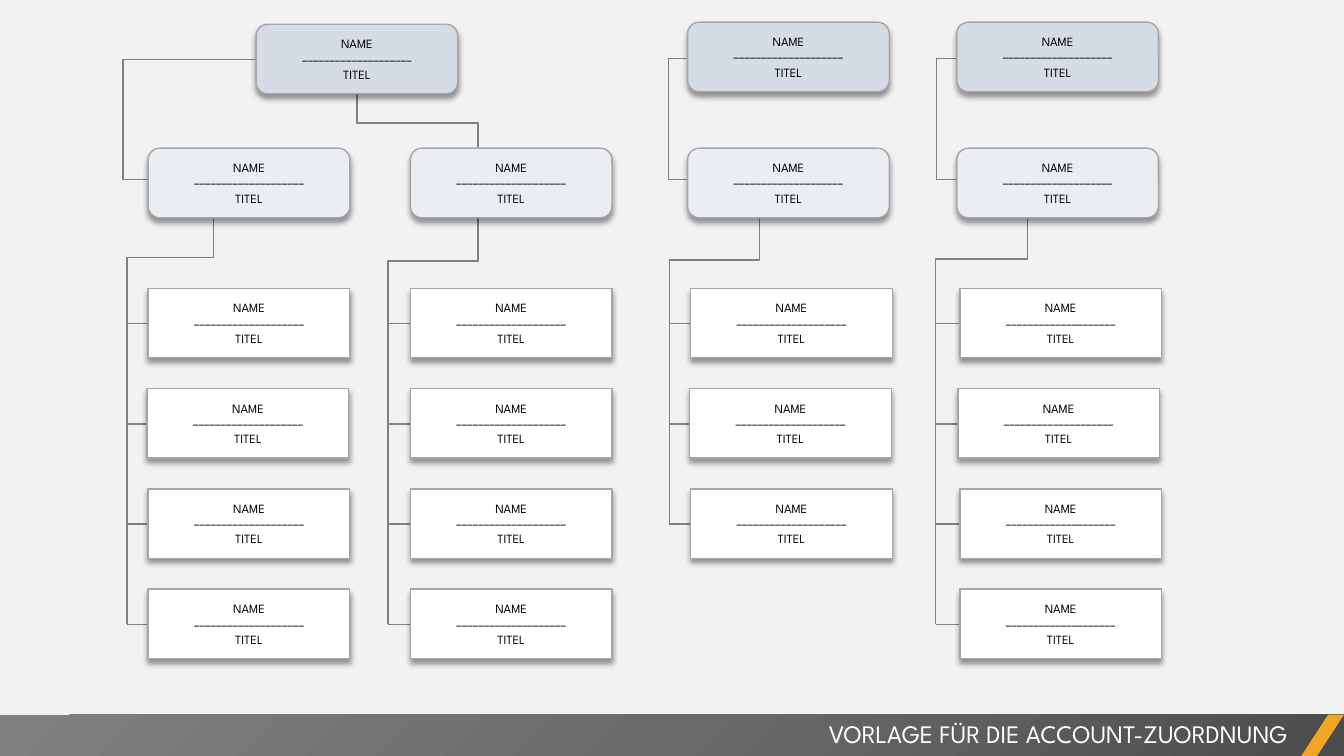
"""Build the account mapping template slide: four reporting lines of name cards."""
from dataclasses import dataclass

from lxml import etree
from pptx import Presentation
from pptx.dml.color import RGBColor
from pptx.enum.shapes import MSO_CONNECTOR, MSO_SHAPE
from pptx.enum.text import MSO_ANCHOR, MSO_AUTO_SIZE, PP_ALIGN
from pptx.oxml import parse_xml
from pptx.oxml.ns import nsdecls, qn
from pptx.shapes.autoshape import Shape
from pptx.shapes.connector import Connector
from pptx.slide import Slide
from pptx.util import Inches, Pt

RECTANGLE = MSO_SHAPE.RECTANGLE
ROUNDED = MSO_SHAPE.FLOWCHART_ALTERNATE_PROCESS
PARALLELOGRAM = MSO_SHAPE.PARALLELOGRAM
STRAIGHT = MSO_CONNECTOR.STRAIGHT
ELBOW = MSO_CONNECTOR.ELBOW
CENTER = PP_ALIGN.CENTER
RIGHT = PP_ALIGN.RIGHT
MIDDLE = MSO_ANCHOR.MIDDLE
FIT_SHAPE = MSO_AUTO_SIZE.SHAPE_TO_FIT_TEXT

BACKGROUND = RGBColor(0xF2, 0xF2, 0xF2)
WHITE = RGBColor(0xFF, 0xFF, 0xFF)
BLACK = RGBColor(0x00, 0x00, 0x00)
HEAD_BLUE = RGBColor(0xD6, 0xDC, 0xE5)
LEAD_BLUE = RGBColor(0xEA, 0xEE, 0xF3)
BORDER_GRAY = RGBColor(0xA6, 0xA6, 0xA6)
LINE_GRAY = RGBColor(0x80, 0x80, 0x80)
ORANGE = RGBColor(0xF0, 0xA6, 0x22)
BAR_STOPS = ((0, RGBColor(0x4C, 0x4C, 0x4C)), (50, RGBColor(0x6B, 0x6B, 0x6B)), (100, LINE_GRAY))

FONT = "League Spartan"
CARD_LINES = ("NAME", "–" * 20, "TITEL")
CARD_WIDTH, CARD_HEIGHT = 2, 0.69
LEAD_TOP, LEAD_BOTTOM = 1.47, 1.85
MEMBER_TOP, BRANCH_TOP, ROW_STEP = 2.86, 3.21, 0.995
BRANCH_LENGTH = 0.66


@dataclass(frozen=True)
class Team:
    """A lead card and the members hanging from its trunk line."""
    lead_left: float
    member_left: float
    second_left: float
    trunk: float
    stem: float
    turn: float
    members: int


@dataclass(frozen=True)
class Head:
    """A top card and the line that leads from it to the lead below."""
    left: float
    top: float
    start: tuple[float, float]
    turn: float
    end: tuple[float, float]


TEAMS = (
    Team(1.47, 1.47, 1.46, 1.26, 2.12, 2.56, 4),
    Team(4.07, 4.07, 4.07, 3.85, 4.74, 2.59, 4),
    Team(6.82, 6.85, 6.84, 6.64, 7.53, 2.58, 3),
    Team(9.49, 9.52, 9.50, 9.28, 10.19, 2.57, 4),
)
HEADS = (
    Head(2.54, 0.24, (2.74, 0.59), 1.22, (1.49, 1.78)),
    Head(6.82, 0.22, (7.86, 0.58), 6.63, (6.86, 1.78)),
    Head(9.49, 0.22, (10.53, 0.58), 9.29, (9.53, 1.78)),
)


def add_line(slide: Slide, kind: MSO_CONNECTOR, start: tuple[float, float],
             end: tuple[float, float]) -> Connector:
    """Draw a thin gray connector without a shadow."""
    line = slide.shapes.add_connector(kind, *map(Inches, start + end))
    line.line.color.rgb = LINE_GRAY
    line.line.width = Pt(1)
    etree.SubElement(line.element.spPr, qn("a:effectLst"))
    return line


def set_bend(line: Connector, share: float) -> None:
    """Place the middle segment of an elbow at a share of its length."""
    geometry = line.element.spPr.find(qn("a:prstGeom"))
    guides = geometry.find(qn("a:avLst"))
    if guides is None:
        guides = etree.SubElement(geometry, qn("a:avLst"))
    etree.SubElement(guides, qn("a:gd"), name="adj1", fmla=f"val {round(share * 100000)}")


def add_side_elbow(slide: Slide, start: tuple[float, float], turn: float,
                   end: tuple[float, float]) -> None:
    """Draw an elbow that leaves sideways and runs down at x = turn."""
    line = add_line(slide, ELBOW, start, end)
    set_bend(line, (turn - start[0]) / (end[0] - start[0]))


def add_down_elbow(slide: Slide, start: tuple[float, float], turn: float,
                   end: tuple[float, float]) -> None:
    """Draw an elbow that leaves downwards and runs across at y = turn."""
    (x1, y1), (x2, y2) = start, end
    center_x, center_y = (x1 + x2) / 2, (y1 + y2) / 2
    half_drop, half_shift = (y2 - y1) / 2, (x2 - x1) / 2
    line = add_line(slide, ELBOW, (center_x - half_drop, center_y + half_shift),
                    (center_x + half_drop, center_y - half_shift))
    line.rotation = 90
    set_bend(line, (turn - y1) / (y2 - y1))


def add_plain_shape(slide: Slide, kind: MSO_SHAPE, left: float, top: float,
                    width: float, height: float, fill: RGBColor) -> Shape:
    """Draw a filled shape without outline or shadow."""
    shape = slide.shapes.add_shape(kind, *map(Inches, (left, top, width, height)))
    shape.fill.solid()
    shape.fill.fore_color.rgb = fill
    shape.line.fill.background()
    shape.shadow.inherit = False
    return shape


def add_card(slide: Slide, kind: MSO_SHAPE, left: float, top: float, fill: RGBColor) -> None:
    """Draw a name card with a soft shadow below it."""
    card = add_plain_shape(slide, kind, left, top, CARD_WIDTH, CARD_HEIGHT, fill)
    card.line.color.rgb = BORDER_GRAY
    card.line.width = Pt(1)
    card.element.spPr.find(qn("a:effectLst")).append(parse_xml(
        f'<a:outerShdw {nsdecls("a")} blurRad="{Pt(4)}" dist="{Pt(3)}" dir="5400000" '
        'algn="t" rotWithShape="0"><a:srgbClr val="000000"><a:alpha val="40000"/>'
        '</a:srgbClr></a:outerShdw>'))
    frame = card.text_frame
    frame.margin_left = frame.margin_right = Inches(0.02)
    frame.margin_top = frame.margin_bottom = Inches(0.02)
    frame.vertical_anchor = MIDDLE
    frame.text = "\n".join(CARD_LINES)
    for paragraph in frame.paragraphs:
        paragraph.alignment = CENTER
        paragraph.font.name = FONT
        paragraph.font.size = Pt(9)
        paragraph.font.color.rgb = BLACK


def add_footer(slide: Slide) -> None:
    """Draw the gradient bar, its orange accent and the slide title."""
    bar = add_plain_shape(slide, RECTANGLE, 0, 7.09, 13.33, 0.42, LINE_GRAY)
    stops = "".join(f'<a:gs pos="{position * 1000}"><a:srgbClr val="{color}"/></a:gs>'
                    for position, color in BAR_STOPS)
    properties = bar.element.spPr
    properties.replace(properties.find(qn("a:solidFill")), parse_xml(
        f'<a:gradFill {nsdecls("a")} rotWithShape="1"><a:gsLst>{stops}</a:gsLst>'
        '<a:path path="circle"><a:fillToRect l="100000" t="100000"/></a:path></a:gradFill>'))
    accent = add_plain_shape(slide, PARALLELOGRAM, 12.9, 7.09, 0.43, 0.42, ORANGE)
    accent.adjustments[0] = 0.65
    title = slide.shapes.add_textbox(*map(Inches, (5.25, 7.08, 7.62, 0.4))).text_frame
    title.word_wrap = True
    title.auto_size = FIT_SHAPE
    title.text = "VORLAGE FÜR DIE ACCOUNT-ZUORDNUNG"
    heading = title.paragraphs[0]
    heading.alignment = RIGHT
    heading.font.name = FONT
    heading.font.size = Pt(18)
    heading.font.color.rgb = WHITE


def add_team_lines(slide: Slide, team: Team) -> None:
    """Draw the trunk of a team and one branch per member."""
    for row in range(team.members):
        y = BRANCH_TOP + row * ROW_STEP
        add_line(slide, STRAIGHT, (team.trunk, y), (team.trunk + BRANCH_LENGTH, y))
    trunk_end = BRANCH_TOP + (team.members - 1) * ROW_STEP
    add_down_elbow(slide, (team.stem, LEAD_BOTTOM), team.turn, (team.trunk, trunk_end))


def add_team_cards(slide: Slide, team: Team) -> None:
    """Draw the lead card and the member cards of a team."""
    add_card(slide, ROUNDED, team.lead_left, LEAD_TOP, LEAD_BLUE)
    for row in range(team.members):
        left = team.second_left if row == 1 else team.member_left
        add_card(slide, RECTANGLE, left, MEMBER_TOP + row * ROW_STEP, WHITE)


def main() -> None:
    """Build and save the slide."""
    deck = Presentation()
    deck.slide_width, deck.slide_height = Inches(13.33), Inches(7.5)
    slide = deck.slides.add_slide(deck.slide_layouts[6])
    slide.background.fill.solid()
    slide.background.fill.fore_color.rgb = BACKGROUND
    add_footer(slide)
    for team in TEAMS:
        add_team_lines(slide, team)
    for head in HEADS:
        add_side_elbow(slide, head.start, head.turn, head.end)
    add_down_elbow(slide, (3.54, 0.62), 1.22, (4.74, 1.82))
    for head in HEADS:
        add_card(slide, ROUNDED, head.left, head.top, HEAD_BLUE)
    for team in TEAMS:
        add_team_cards(slide, team)
    deck.save("out.pptx")


if __name__ == "__main__":
    main()
